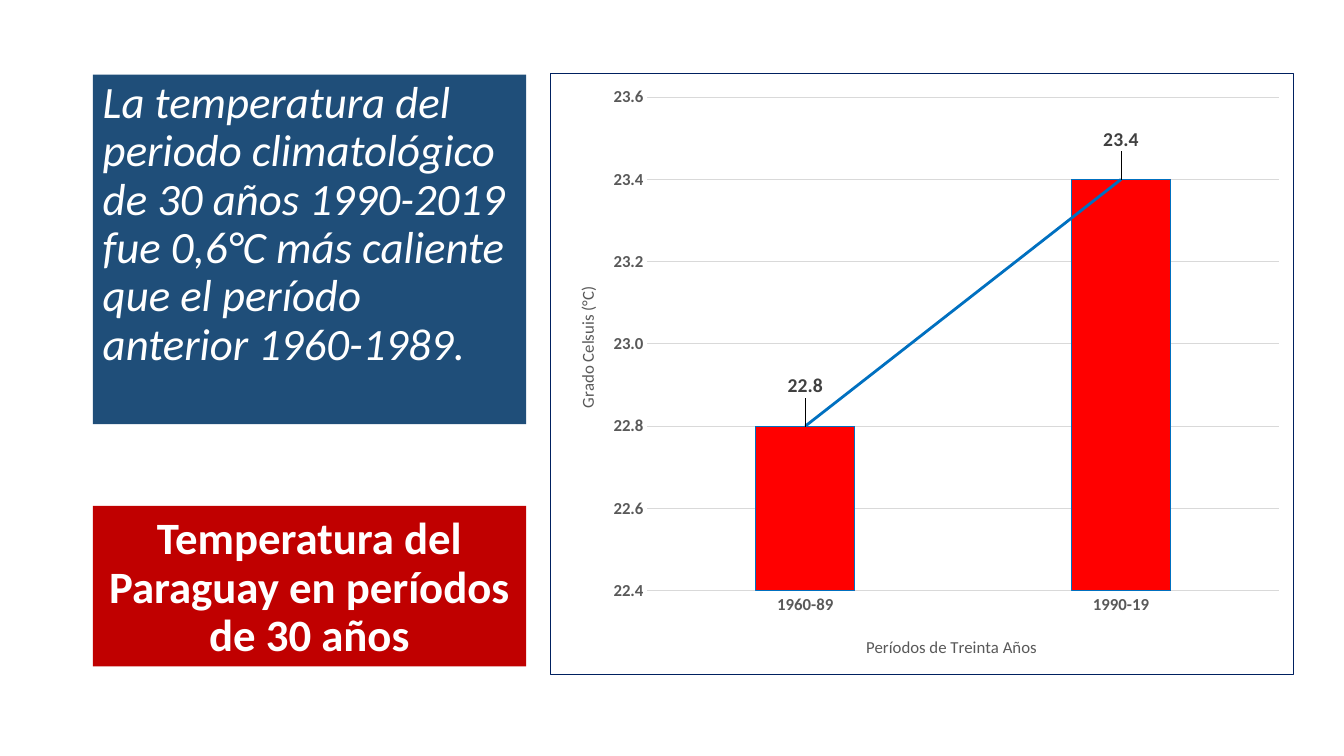
from lxml.etree import SubElement, Element
from pptx import Presentation
from pptx.chart.data import CategoryChartData
from pptx.dml.color import RGBColor
from pptx.enum.chart import XL_CHART_TYPE as ChartType
from pptx.enum.chart import XL_LABEL_POSITION as LabelPosition
from pptx.enum.chart import XL_TICK_MARK as TickMark
from pptx.enum.text import MSO_ANCHOR as Anchor
from pptx.enum.text import MSO_AUTO_SIZE as AutoSize
from pptx.enum.text import PP_ALIGN as Align
from pptx.oxml.ns import qn
from pptx.util import Cm, Pt

COLORS = {
    "white": "FFFFFF", "statement": "1F4E79", "title": "C00000",
    "bar": "FF0000", "trend": "0070C0", "border": "002060",
    "grid": "D9D9D9", "axis": "595959", "label": "404040", "text": "000000",
}
FONT = "Calibri"
LEFT_COLUMN = {"left": 2.34, "width": 10.92}
STATEMENT_BOX = {**LEFT_COLUMN, "top": 1.88, "height": 8.81}
TITLE_BOX = {**LEFT_COLUMN, "top": 12.75, "height": 4.04}
CHART_BOX = {"left": 13.87, "top": 1.83, "width": 18.75, "height": 15.19}


def rgb(name):
    return RGBColor.from_string(COLORS[name])


def format_font(font, color, **values):
    font.name = FONT
    font.color.rgb = rgb(color)
    for name, value in values.items():
        setattr(font, name, value)


def format_line(line, color, width=0.75):
    line.color.rgb = rgb(color)
    line.width = Pt(width)


def fill_panel(shape, box, color, text, anchor, para_format, font_format):
    """Place a text shape in its box and write one formatted paragraph."""
    for name, value in box.items():
        setattr(shape, name, Cm(value))
    shape.fill.solid()
    shape.fill.fore_color.rgb = rgb(color)
    frame = shape.text_frame
    frame.text = text
    frame.word_wrap = True
    frame.auto_size = AutoSize.NONE
    frame.vertical_anchor = anchor
    para = frame.paragraphs[0]
    para.line_spacing = 0.9
    for name, value in para_format.items():
        setattr(para, name, value)
    format_font(para.runs[0].font, "white", size=Pt(32), **font_format)


def add_statement(page, box):
    shape = page.shapes.add_textbox(0, 0, 0, 0)
    text = ("La temperatura del periodo climatológico de 30 años 1990-2019 "
            "fue 0,6°C más caliente que el período anterior 1960-1989.")
    fill_panel(shape, box, "statement", text, Anchor.TOP,
               {"alignment": Align.LEFT, "space_before": Pt(10)},
               {"italic": True})


def add_title(page, box):
    fill_panel(page.shapes.title, box, "title",
               "Temperatura del Paraguay en períodos de 30 años",
               Anchor.BOTTOM, {"alignment": Align.CENTER}, {"bold": True})


def set_layout(parent, index, **values):
    """Give a chart part a manual layout, as fractions of the chart."""
    for old in parent.findall(qn("c:layout")):
        parent.remove(old)
    layout = Element(qn("c:layout"))
    manual = SubElement(layout, qn("c:manualLayout"))
    for name, value in values.items():
        SubElement(manual, qn(f"c:{name}")).set("val", str(value))
    parent.insert(index, layout)


def add_line_properties(parent, color, width):
    """Append shape properties holding one solid line; return them."""
    properties = SubElement(parent, qn("c:spPr"))
    line = SubElement(properties, qn("a:ln"), w=str(Pt(width)))
    fill = SubElement(line, qn("a:solidFill"))
    SubElement(fill, qn("a:srgbClr"), val=COLORS[color])
    return properties


def format_axis(axis, title, left, top):
    axis.major_tick_mark = axis.minor_tick_mark = TickMark.NONE
    format_font(axis.tick_labels.font, "axis", size=Pt(12), bold=True)
    frame = axis.axis_title.text_frame
    frame.text = title
    format_font(frame.paragraphs[0].runs[0].font, "axis",
                size=Pt(12), bold=False)
    set_layout(axis.axis_title._element, 1,
               xMode="edge", yMode="edge", x=left, y=top)


def format_axes(chart):
    format_axis(chart.category_axis, "Períodos de Treinta Años", 0.42, 0.93)
    format_line(chart.category_axis.format.line, "grid")
    axis = chart.value_axis
    format_axis(axis, "Grado Celsuis (°C)", 0.03, 0.35)
    body = axis.axis_title._element.find(".//" + qn("a:bodyPr"))
    body.set("rot", "-5400000")
    for name, value in {"minimum_scale": 22.4, "maximum_scale": 23.6,
                        "major_unit": 0.2}.items():
        setattr(axis, name, value)
    axis.tick_labels.number_format = "0.0"
    axis.tick_labels.number_format_is_linked = False
    axis.format.line.fill.background()
    format_line(axis.major_gridlines.format.line, "grid")


def format_bars(plot):
    plot.gap_width, plot.overlap = 219, -27
    plot.vary_by_categories = False
    series = plot.series[0]
    series.format.fill.solid()
    series.format.fill.fore_color.rgb = rgb("bar")
    format_line(series.format.line, "trend")
    for index in range(len(plot.categories)):
        label = series.points[index].data_label
        format_font(label.font, "label", size=Pt(14), bold=True)
        label.position = LabelPosition.OUTSIDE_END
    for label in series._element.iter(qn("c:dLbl")):
        set_layout(label, 1, x=0, y=-0.04)
    trend = Element(qn("c:trendline"))
    add_line_properties(trend, "trend", 2)
    SubElement(trend, qn("c:trendlineType")).set("val", "linear")
    for name in ("dispRSqr", "dispEq"):
        SubElement(trend, qn(f"c:{name}")).set("val", "0")
    series._element.find(qn("c:cat")).addprevious(trend)


def add_temperature_chart(page, box):
    data = CategoryChartData(number_format="0.0")
    data.categories = ["1960-89", "1990-19"]
    data.add_series("Series 1", [22.8, 23.4])
    place = [Cm(box[name]) for name in ("left", "top", "width", "height")]
    chart = page.shapes.add_chart(
        ChartType.COLUMN_CLUSTERED, *place, data).chart
    chart.has_title = chart.has_legend = False
    format_font(chart.font, "text", size=Pt(12))
    format_axes(chart)
    format_bars(chart.plots[0])
    space = chart._chartSpace
    set_layout(space.find(".//" + qn("c:plotArea")), 0,
               layoutTarget="inner", xMode="edge", yMode="edge",
               x=0.13, y=0.04, w=0.85, h=0.82)
    border = add_line_properties(space, "border", 0.75)
    space.find(qn("c:chart")).addnext(border)


def main():
    deck = Presentation()
    deck.slide_width, deck.slide_height = Cm(33.87), Cm(19.05)
    page = deck.slides.add_slide(deck.slide_layouts.get_by_name("Title Only"))
    add_statement(page, STATEMENT_BOX)
    add_temperature_chart(page, CHART_BOX)
    add_title(page, TITLE_BOX)
    deck.save("out.pptx")


if __name__ == "__main__":
    main()
